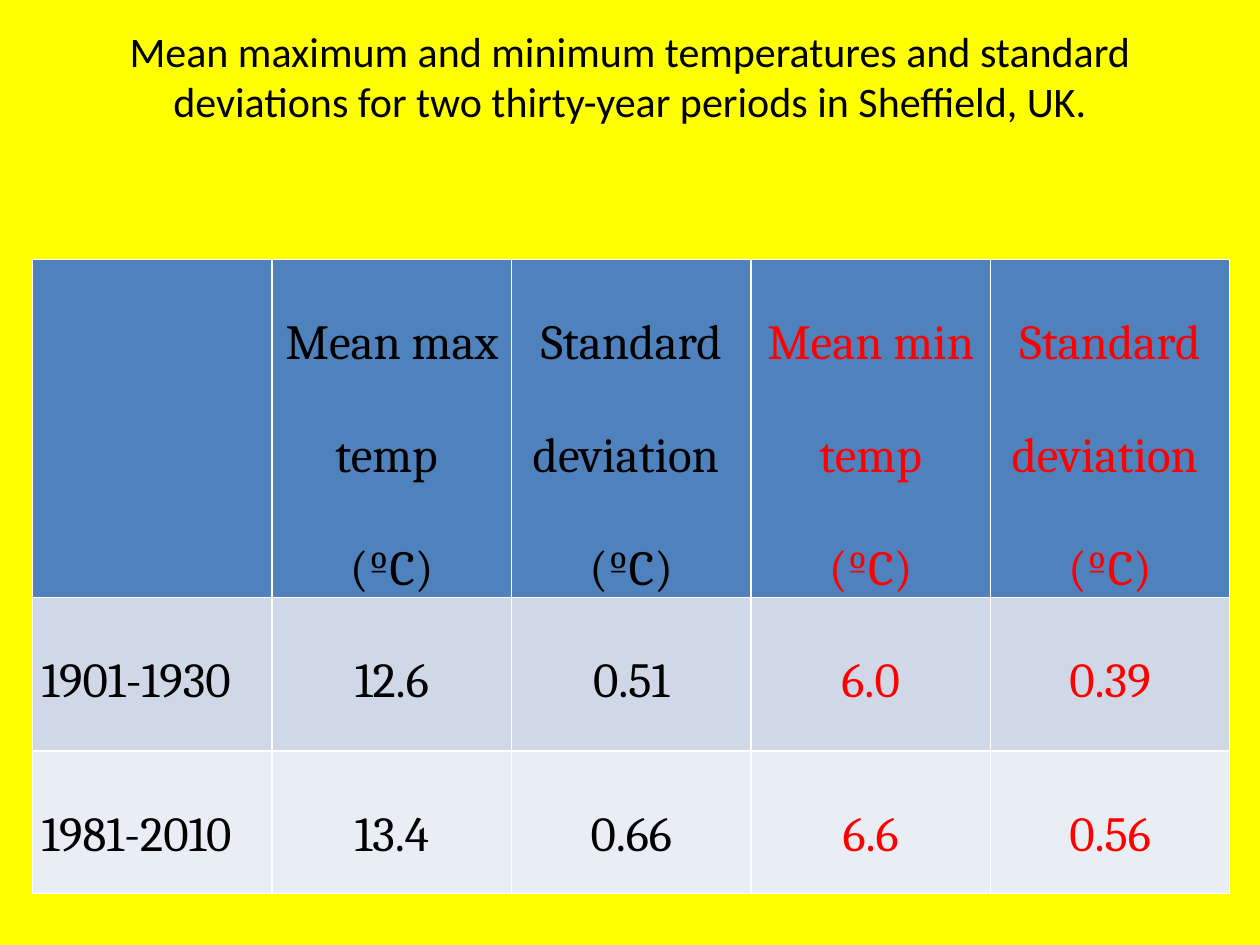
from pptx import Presentation
from pptx.dml.color import RGBColor
from pptx.enum import text as t
from pptx.util import Inches, Pt

HUES = {"page": "FFFF00", "head": "4F81BD", "odd": "D0D8E8",
        "even": "E9EDF4", "max": "000000", "min": "FF0000"}
TITLE = ("Mean maximum and minimum temperatures and standard "
         "deviations for two thirty-year periods in Sheffield, UK.")
ROWS = [
    ("head", 2, ["", "Mean max temp \v(ºC)", "Standard deviation \v(ºC)",
                 "Mean min temp\v(ºC)", "Standard deviation \v(ºC)"]),
    ("odd", 1.22, ["1901-1930", "12.6", "0.51", "6.0", "0.39"]),
    ("even", 1.13, ["1981-2010", "13.4", "0.66", "6.6", "0.56"]),
]
COLS = ["max", "max", "max", "min", "min"]
WIDE = 1.9
INSET = {"margin_left": Inches(0.07), "margin_right": Inches(0.07),
         "margin_top": 0, "margin_bottom": 0}


def apply(item, form):
    for key, value in form.items():
        setattr(item, key, value)


def paint(fill, hue):
    fill.solid()
    fill.fore_color.rgb = RGBColor.from_string(HUES[hue])


def style(para, face, size, hue, align):
    para.alignment = align
    for run in para.runs:
        apply(run.font, {"name": face, "size": Pt(size), "bold": False})
        run.font.color.rgb = RGBColor.from_string(HUES[hue])


def add_title(slide):
    title = slide.shapes.title
    apply(title, {"left": Inches(0.5), "top": Inches(0.2),
                  "width": Inches(9), "height": Inches(1.25)})
    frame = title.text_frame
    frame.text = TITLE
    apply(frame, {"margin_top": 0, "word_wrap": True,
                  "auto_size": t.MSO_AUTO_SIZE.NONE,
                  "vertical_anchor": t.MSO_ANCHOR.TOP})
    style(frame.paragraphs[0], "Calibri", 24, "max", t.PP_ALIGN.CENTER)


def fill_cell(cell, words, back, hue, align):
    paint(cell.fill, back)
    apply(cell, INSET)
    cell.text = words
    para = cell.text_frame.paragraphs[0]
    para.line_spacing = 2.0
    style(para, "Cambria", 28, hue, align)


def add_temps(slide):
    high = sum(row[1] for row in ROWS)
    grid = slide.shapes.add_table(
        len(ROWS), len(COLS), Inches(0.26), Inches(2.06),
        Inches(WIDE * len(COLS)), Inches(high)).table
    for col in grid.columns:
        col.width = Inches(WIDE)
    for r, (back, tall, texts) in enumerate(ROWS):
        grid.rows[r].height = Inches(tall)
        for c, (words, hue) in enumerate(zip(texts, COLS)):
            align = t.PP_ALIGN.CENTER if c else t.PP_ALIGN.LEFT
            fill_cell(grid.cell(r, c), words, back, hue, align)


def main():
    deck = Presentation()
    apply(deck, {"slide_width": Inches(10), "slide_height": Inches(7.5)})
    slide = deck.slides.add_slide(deck.slide_layouts[5])
    paint(slide.background.fill, "page")
    add_title(slide)
    add_temps(slide)
    deck.save("out.pptx")


if __name__ == "__main__":
    main()
